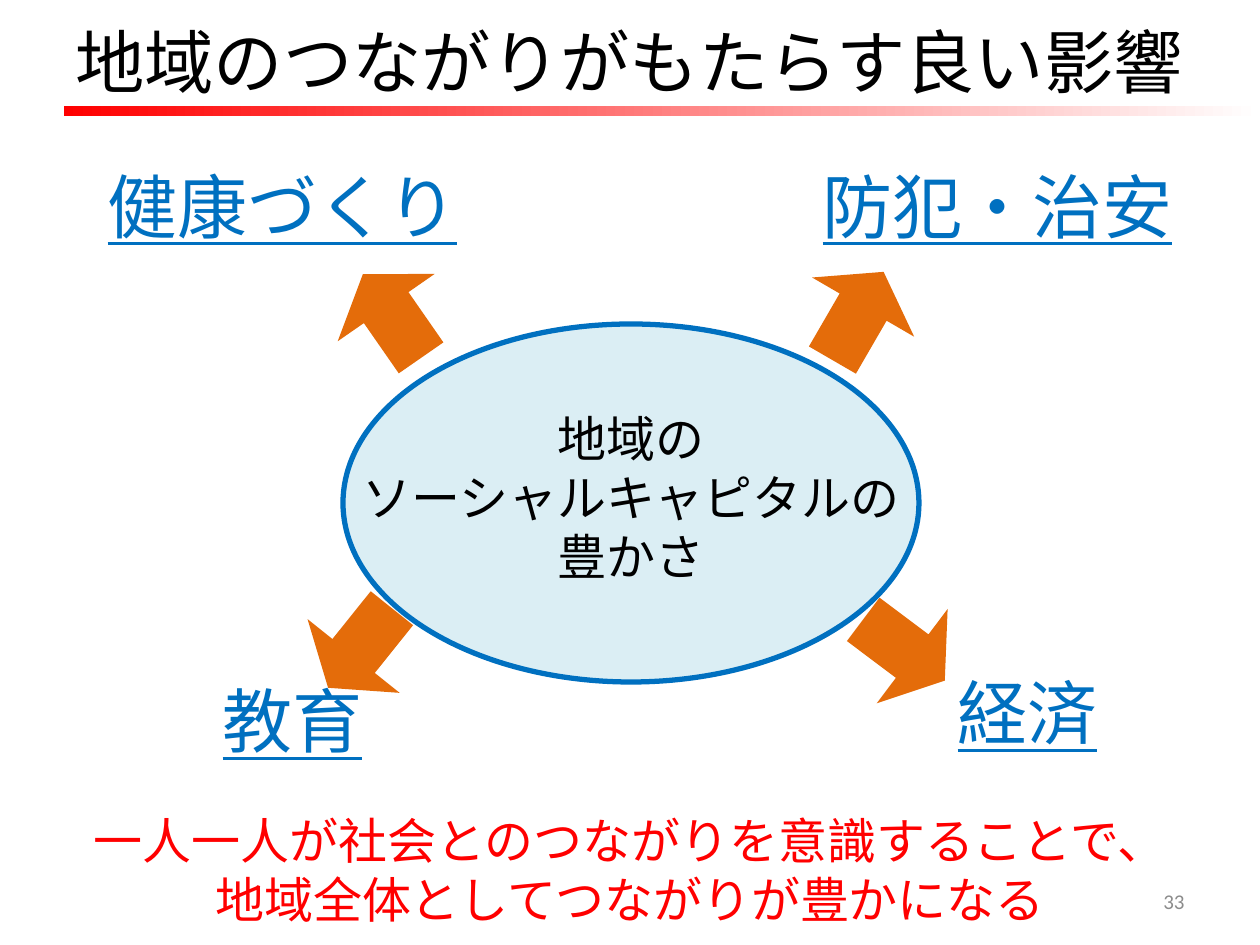
from lxml import etree
from pptx import Presentation, util as u
from pptx.dml.color import RGBColor
from pptx.enum import shapes, text
from pptx.oxml.ns import qn

PX = u.Inches(1) / 126
BLACK = RGBColor(0x00, 0x00, 0x00)
WHITE = RGBColor(0xFF, 0xFF, 0xFF)
RED = RGBColor(0xFF, 0x00, 0x00)
BLUE = RGBColor(0x00, 0x70, 0xC0)
PALE_BLUE = RGBColor(0xDB, 0xEE, 0xF4)
ORANGE = RGBColor(0xE4, 0x6C, 0x0A)
GRAY = RGBColor(0x8C, 0x8C, 0x8C)
JAPANESE = "Noto Sans CJK JP"
LEFT, CENTER, RIGHT = text.PP_ALIGN.LEFT, text.PP_ALIGN.CENTER, text.PP_ALIGN.RIGHT

# Content: lines, box in px, size in pt, colour, alignment, font
TEXTS = [
    (["地域のつながりがもたらす良い影響"], (63, 16, 1197, 90), 39.6, BLACK, LEFT, JAPANESE),
    (["地域の", "ソーシャルキャピタルの", "豊かさ"],
     (343, 383, 576, 228), 28, BLACK, CENTER, JAPANESE),
    (["一人一人が社会とのつながりを意識することで、", "地域全体としてつながりが豊かになる"],
     (0, 810, 1260, 118), 28, RED, CENTER, JAPANESE),
    (["33"], (903, 876, 294, 50), 12, GRAY, RIGHT, "Calibri"),
]
# Benefit: label position, arrow position, arrow rotation
BENEFITS = [
    ("健康づくり", (74, 155), (333, 265), 325.2),
    ("防犯・治安", (789, 155), (799, 265), 30.1),
    ("経済", (819, 662), (845, 599), 126.9),
    ("教育", (84, 670), (301, 597), 218.7),
]
LABEL_SIZE = (417, 100)
ARROW_SIZE = (118, 102)


def px(*lengths):
    return [round(length * PX) for length in lengths]


def add_text(slide, lines, box, size, color, align, font_name, underline=None):
    frame = slide.shapes.add_textbox(*px(*box)).text_frame
    frame.word_wrap = True
    frame.vertical_anchor = text.MSO_ANCHOR.MIDDLE
    frame.text = "\n".join(lines)
    for paragraph in frame.paragraphs:
        paragraph.alignment = align
        font = paragraph.font
        font.size = u.Pt(size)
        font.name = font_name
        font.underline = underline
        font.color.rgb = color
        # East Asian typeface
        properties = paragraph._p.pPr.find(qn("a:defRPr"))
        etree.SubElement(properties, qn("a:ea"), typeface=font_name)


def add_shape(slide, kind, box, color=None):
    shape = slide.shapes.add_shape(kind, *px(*box))
    shape.shadow.inherit = False
    shape.line.fill.background()
    if color is not None:
        shape.fill.solid()
        shape.fill.fore_color.rgb = color
    return shape


def main():
    presentation = Presentation()
    presentation.slide_width, presentation.slide_height = px(1260, 945)
    slide = presentation.slides.add_slide(presentation.slide_layouts[6])

    # Fading rule under the title
    rule = add_shape(slide, shapes.MSO_SHAPE.RECTANGLE, (64, 106, 1196, 10))
    rule.fill.gradient()
    rule.fill.gradient_angle = 0
    for stop, color in zip(rule.fill.gradient_stops, (RED, WHITE)):
        stop.color.rgb = color

    # Central ellipse
    ellipse = add_shape(slide, shapes.MSO_SHAPE.OVAL, (343, 324, 576, 358), PALE_BLUE)
    ellipse.line.color.rgb = BLUE
    ellipse.line.width = u.Pt(3)

    # Title, centre text, conclusion and page number
    for item in TEXTS:
        add_text(slide, *item)

    # Benefits with their arrows
    for label, label_at, arrow_at, rotation in BENEFITS:
        add_text(slide, [label], label_at + LABEL_SIZE, 40, BLUE, CENTER, JAPANESE, True)
        arrow = add_shape(slide, shapes.MSO_SHAPE.UP_ARROW, arrow_at + ARROW_SIZE, ORANGE)
        arrow.rotation = rotation
        arrow.adjustments[0] = 0.46
        arrow.adjustments[1] = 0.4

    presentation.save("out.pptx")


if __name__ == "__main__":
    main()
